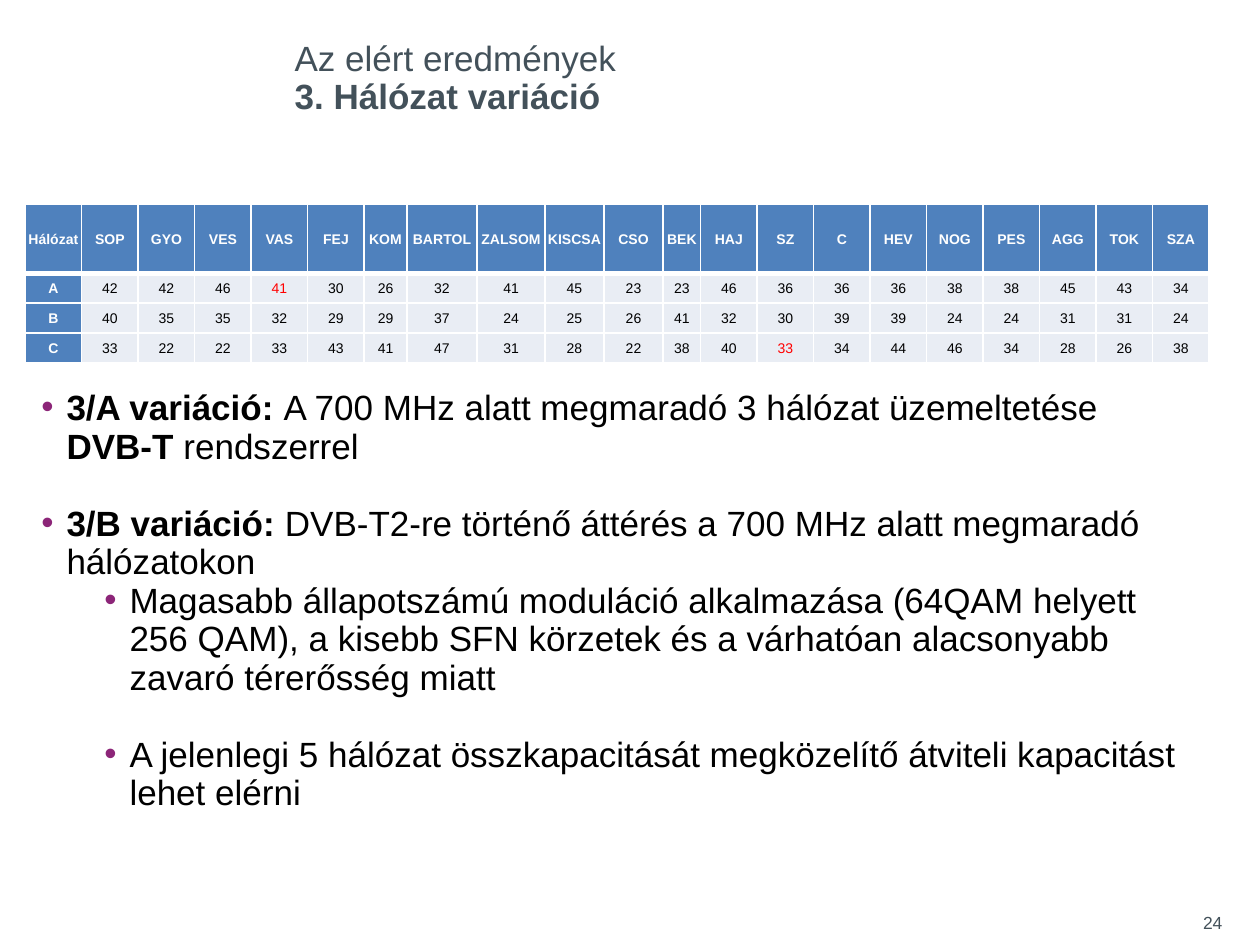
"""Build the slide on network variation 3: a capacity table above a bulleted summary."""
from dataclasses import dataclass

import lxml.etree
import pptx
import pptx.dml.color
import pptx.enum.text
import pptx.oxml.ns
import pptx.util

Inches = pptx.util.Inches
Align = pptx.enum.text.PP_ALIGN
Anchor = pptx.enum.text.MSO_ANCHOR

COLORS = {
    "slate": "43515A",
    "purple": "8C2578",
    "blue": "4F81BD",
    "pale": "E9EDF4",
    "white": "FFFFFF",
    "black": "000000",
    "red": "FF0000",
}
FONT = "Arial"
LINE_SPACING = pptx.util.Pt(22)

HEADERS = (
    "Hálózat SOP GYO VES VAS FEJ KOM BARTOL ZALSOM KISCSA CSO "
    "BEK HAJ SZ C HEV NOG PES AGG TOK SZA"
).split()
NETWORKS = {
    "A": "42 42 46 41 30 26 32 41 45 23 23 46 36 36 36 38 38 45 43 34",
    "B": "40 35 35 32 29 29 37 24 25 26 41 32 30 39 39 24 24 31 31 24",
    "C": "33 22 22 33 43 41 47 31 28 22 38 40 33 34 44 46 34 28 26 38",
}
HIGHLIGHTS = {("A", "VAS"), ("C", "SZ")}
SPECIAL_WIDTHS = {
    "KOM": 0.34, "BARTOL": 0.56, "ZALSOM": 0.54,
    "KISCSA": 0.47, "CSO": 0.47, "BEK": 0.3,
}
TABLE_WIDTH, TABLE_HEIGHT, HEADER_HEIGHT = 9.4, 1.26, 0.55


@dataclass
class Heading:
    text: str
    top: float
    height: float
    anchor: Anchor
    bold: bool


@dataclass
class Bullet:
    spans: list[tuple[str, bool]]
    level: int = 0
    space_before: int = 0


HEADINGS = [
    Heading("Az elért eredmények", 0.02, 0.6, Anchor.BOTTOM, False),
    Heading("3. Hálózat variáció", 0.62, 0.31, Anchor.TOP, True),
]
BULLETS = [
    Bullet([
        ("3/A variáció: ", True),
        ("A 700 MHz alatt megmaradó 3 hálózat üzemeltetése ", False),
        ("DVB-T ", True),
        ("rendszerrel", False),
    ]),
    Bullet([
        ("3/B variáció: ", True),
        ("DVB-T2-re történő áttérés a 700 MHz alatt megmaradó hálózatokon", False),
    ], space_before=22),
    Bullet([(
        "Magasabb állapotszámú moduláció alkalmazása (64QAM helyett 256 QAM), "
        "a kisebb SFN körzetek és a várhatóan alacsonyabb zavaró térerősség miatt", False,
    )], level=1),
    Bullet([(
        "A jelenlegi 5 hálózat összkapacitását megközelítő átviteli kapacitást "
        "lehet elérni", False,
    )], level=1, space_before=22),
]


def rgb(name: str) -> pptx.dml.color.RGBColor:
    return pptx.dml.color.RGBColor.from_string(COLORS[name])


def add_span(para, text: str, *, size: float = 20, color: str = "black",
             bold: bool = False) -> None:
    span = para.add_run()
    span.text = text
    span.font.name = FONT
    span.font.size = pptx.util.Pt(size)
    span.font.bold = bold
    span.font.color.rgb = rgb(color)


def add_box(page, left: float, top: float, width: float, height: float):
    box = page.shapes.add_textbox(Inches(left), Inches(top), Inches(width), Inches(height))
    box.text_frame.word_wrap = True
    return box.text_frame


def add_child(parent, tag: str, **attributes: str):
    return lxml.etree.SubElement(parent, pptx.oxml.ns.qn(tag), attributes)


def add_heading(page, heading: Heading) -> None:
    frame = add_box(page, 2.24, heading.top, 7.1, heading.height)
    frame.margin_top = frame.margin_bottom = 0
    frame.vertical_anchor = heading.anchor
    para = frame.paragraphs[0]
    para.line_spacing = LINE_SPACING
    add_span(para, heading.text, color="slate", bold=heading.bold)


def add_bullet(para, bullet: Bullet) -> None:
    properties = para._p.get_or_add_pPr()
    properties.set("marL", str(Inches(0.43 + 0.5 * bullet.level)))
    properties.set("indent", str(Inches(-0.2)))
    bullet_color = add_child(properties, "a:buClr")
    add_child(bullet_color, "a:srgbClr", val=COLORS["purple"])
    add_child(properties, "a:buFont", typeface=FONT)
    add_child(properties, "a:buChar", char="•")
    para.level = bullet.level
    para.line_spacing = LINE_SPACING
    para.space_before = pptx.util.Pt(bullet.space_before)
    for text, bold in bullet.spans:
        add_span(para, text, bold=bold)


def fill_cell(cell, text: str, *, fill: str, color: str, bold: bool,
              top_line: float, bottom_line: float) -> None:
    properties = cell._tc.get_or_add_tcPr()
    lines = {"a:lnL": 1, "a:lnR": 1, "a:lnT": top_line, "a:lnB": bottom_line}
    for tag, width in lines.items():
        line = add_child(properties, tag, w=str(pptx.util.Pt(width)))
        add_child(add_child(line, "a:solidFill"), "a:srgbClr", val=COLORS["white"])
    cell.fill.solid()
    cell.fill.fore_color.rgb = rgb(fill)
    cell.margin_left = cell.margin_right = cell.margin_top = Inches(0.01)
    cell.margin_bottom = 0
    cell.vertical_anchor = Anchor.MIDDLE
    para = cell.text_frame.paragraphs[0]
    para.alignment = Align.CENTER
    add_span(para, text, size=8, color=color, bold=bold)


def add_network_table(page) -> None:
    rows = [HEADERS] + [[name, *values.split()] for name, values in NETWORKS.items()]
    table = page.shapes.add_table(
        len(rows), len(HEADERS), Inches(0.2), Inches(1.62),
        Inches(TABLE_WIDTH), Inches(TABLE_HEIGHT),
    ).table
    widths = [SPECIAL_WIDTHS.get(header, 0.45) for header in HEADERS]
    for column, width in zip(table.columns, widths):
        column.width = Inches(width * TABLE_WIDTH / sum(widths))
    for row in table.rows:
        row.height = Inches((TABLE_HEIGHT - HEADER_HEIGHT) / len(NETWORKS))
    table.rows[0].height = Inches(HEADER_HEIGHT)
    for row_index, row in enumerate(rows):
        for column_index, text in enumerate(row):
            is_header = row_index == 0 or column_index == 0
            is_marked = (row[0], HEADERS[column_index]) in HIGHLIGHTS
            fill_cell(
                table.cell(row_index, column_index), text,
                fill="blue" if is_header else "pale",
                color="white" if is_header else "red" if is_marked else "black",
                bold=is_header,
                top_line=3 if row_index == 1 else 1,
                bottom_line=3 if row_index == 0 else 1,
            )


def main() -> None:
    deck = pptx.Presentation()
    deck.slide_width, deck.slide_height = Inches(10), Inches(7.5)
    page = deck.slides.add_slide(deck.slide_layouts[6])
    number = add_box(page, 9.33, 7.19, 0.47, 0.4).paragraphs[0]
    number.alignment = Align.RIGHT
    add_span(number, "24", size=10, color="slate")
    for heading in HEADINGS:
        add_heading(page, heading)
    frame = add_box(page, 0, 3.04, 9.57, 3.8)
    for index, bullet in enumerate(BULLETS):
        add_bullet(frame.add_paragraph() if index else frame.paragraphs[0], bullet)
    add_network_table(page)
    deck.save("out.pptx")


if __name__ == "__main__":
    main()
